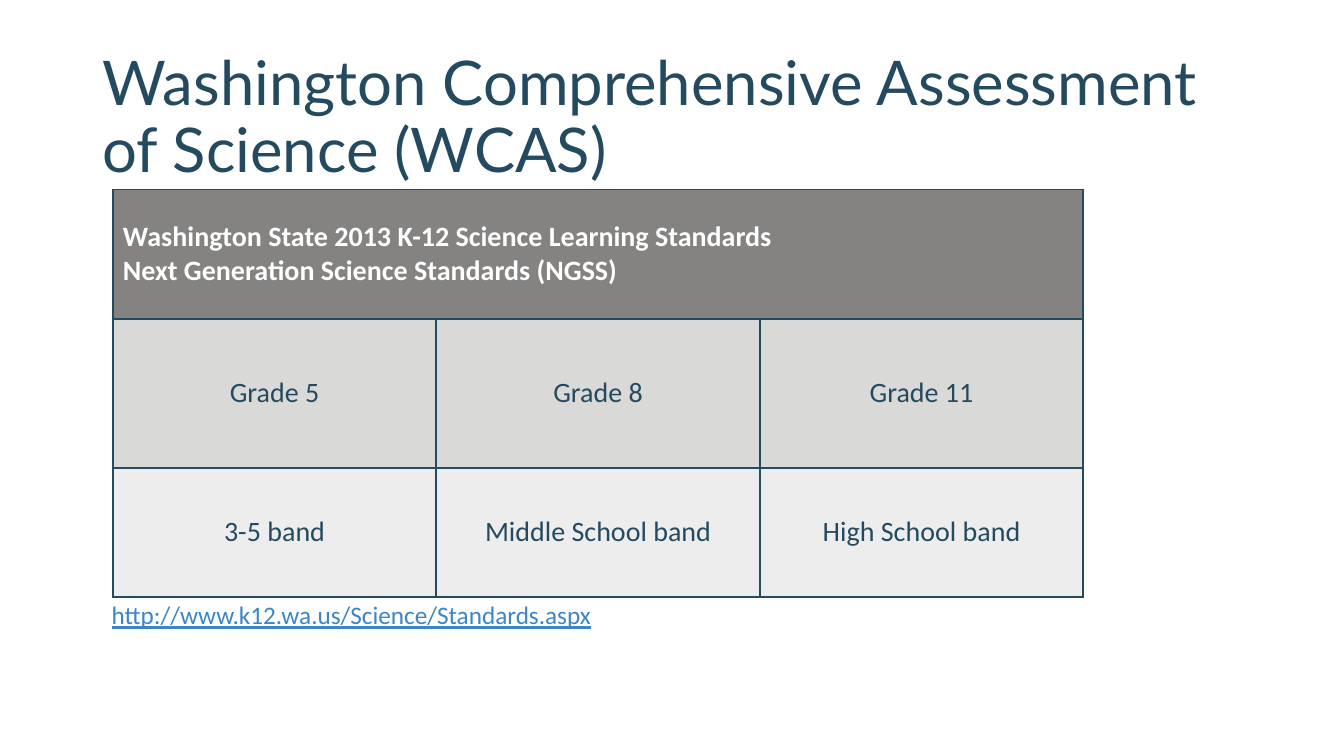
"""Build the slide on the Washington science assessment and its grade bands."""
from dataclasses import dataclass

from lxml.etree import SubElement
from pptx import Presentation
from pptx.dml.color import RGBColor as Rgb
from pptx.enum.text import MSO_ANCHOR as Anchor, MSO_AUTO_SIZE as Fit, PP_ALIGN as Align
from pptx.oxml.ns import qn
from pptx.slide import Slide
from pptx.table import _Cell as Cell
from pptx.text.text import _Paragraph as Para
from pptx.util import Pt


@dataclass(frozen=True)
class Theme:
    ink: str = "244A5F"
    white: str = "FFFFFF"
    link: str = "3C85C6"
    head: str = "848382"
    title: float = 44
    body: float = 20
    small: float = 18
    rule: float = 1.5
    face: str = "Lato"
    text: str = "Calibri"


@dataclass(frozen=True)
class Row:
    height: float
    fill: str
    cells: tuple[str, ...]
    color: str
    bold: bool = False
    align: Align = Align.CENTER


THEME = Theme()
COLS = 3
COL_WIDTH = 231.1
ROWS = (
    Row(92.2, THEME.head,
        ("Washington State 2013 K-12 Science Learning Standards\n"
         "Next Generation Science Standards (NGSS)", "", ""),
        THEME.white, True, Align.LEFT),
    Row(106.6, "D9D9D8", ("Grade 5", "Grade 8", "Grade 11"), THEME.ink),
    Row(92.2, "EDEDED",
        ("3-5 band", "Middle School band", "High School band"), THEME.ink),
)


def style(para: Para, face: str, size: float, color: str) -> None:
    para.font.name = face
    para.font.size = Pt(size)
    para.font.color.rgb = Rgb.from_string(color)


def border(cell: Cell) -> None:
    props = cell._tc.get_or_add_tcPr()
    for side in ("a:lnL", "a:lnR", "a:lnT", "a:lnB"):
        line = SubElement(props, qn(side), w=str(Pt(THEME.rule)))
        fill = SubElement(line, qn("a:solidFill"))
        SubElement(fill, qn("a:srgbClr"), val=THEME.ink)


def paint(cell: Cell, text: str, row: Row) -> None:
    border(cell)
    cell.fill.solid()
    cell.fill.fore_color.rgb = Rgb.from_string(row.fill)
    cell.vertical_anchor = Anchor.MIDDLE
    cell.text = text
    for para in cell.text_frame.paragraphs:
        para.alignment = row.align
        style(para, THEME.text, THEME.body, row.color)
        para.font.bold = row.bold


def add_title(slide: Slide) -> None:
    title = slide.shapes.title
    title.left, title.top = Pt(66), Pt(33)
    title.width, title.height = Pt(828), Pt(104.4)
    frame = title.text_frame
    frame.text = "Washington Comprehensive Assessment of Science (WCAS)"
    frame.auto_size = Fit.NONE
    frame.vertical_anchor = Anchor.MIDDLE
    para = frame.paragraphs[0]
    para.alignment = Align.LEFT
    para.line_spacing = 0.9
    style(para, THEME.face, THEME.title, THEME.ink)


def add_bands(slide: Slide) -> None:
    table = slide.shapes.add_table(
        len(ROWS), COLS, Pt(80.6), Pt(135.4),
        Pt(COLS * COL_WIDTH), Pt(sum(row.height for row in ROWS))).table
    table.first_row = table.horz_banding = False
    for col in table.columns:
        col.width = Pt(COL_WIDTH)
    for at, row in enumerate(ROWS):
        table.rows[at].height = Pt(row.height)
        for col, text in enumerate(row.cells):
            paint(table.cell(at, col), text, row)
    table.cell(0, 0).merge(table.cell(0, COLS - 1))


def add_link(slide: Slide) -> None:
    box = slide.shapes.add_textbox(Pt(72.7), Pt(424.8), Pt(486), Pt(51.1))
    box.text_frame.word_wrap = True
    para = box.text_frame.paragraphs[0]
    para.text = "http://www.k12.wa.us/Science/Standards.aspx"
    style(para, THEME.text, THEME.small, THEME.link)
    para.font.underline = True


def main() -> None:
    deck = Presentation()
    deck.slide_width, deck.slide_height = Pt(960), Pt(540)
    slide = deck.slides.add_slide(deck.slide_layouts.get_by_name("Title Only"))
    add_title(slide)
    add_bands(slide)
    add_link(slide)
    deck.save("out.pptx")


if __name__ == "__main__":
    main()
